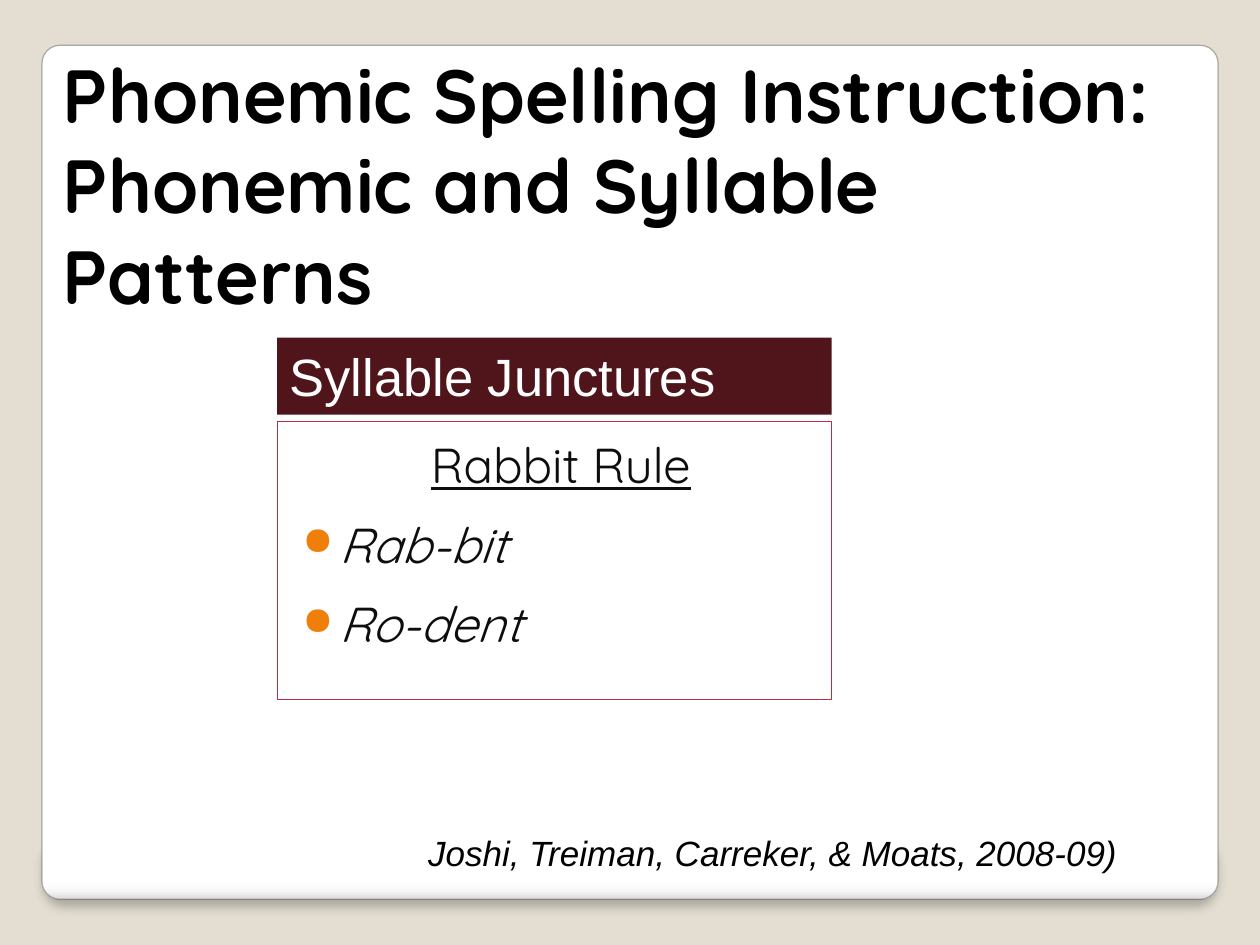
from dataclasses import dataclass

from lxml import etree
from pptx import Presentation
from pptx.dml.color import RGBColor
from pptx.enum.shapes import MSO_SHAPE
from pptx.enum.text import MSO_ANCHOR, PP_ALIGN
from pptx.oxml import parse_xml
from pptx.oxml.ns import nsdecls, qn
from pptx.util import Pt

ROUND, RECT = MSO_SHAPE.ROUNDED_RECTANGLE, MSO_SHAPE.RECTANGLE
TOP = MSO_ANCHOR.TOP
LEFT, CENTER = PP_ALIGN.LEFT, PP_ALIGN.CENTER


@dataclass(frozen=True)
class Theme:
    """Colours, fonts and type sizes of the slide."""
    back: str = "E3DED1"
    edge: str = "302F2C"
    frame: str = "BA3040"
    band: str = "50141B"
    dot: str = "F07F09"
    ink: str = "000000"
    soft: str = "0D0D0D"
    white: str = "FFFFFF"
    stops: tuple = ((0, "FFFFFF"), (98, "FFFFFF"), (99, "F7F7F7"), (100, "DADADA"))
    head: str = "Quicksand"
    plain: str = "Arial"
    title: int = 43
    label: int = 30
    body: int = 28
    cite: int = 20


THEME = Theme()


def rgb(code):
    """Turn a hex code into a colour."""
    return RGBColor.from_string(code)


def style(para, face, size, color, **flags):
    """Set the font of a whole paragraph."""
    font = para.font
    font.name, font.size = face, Pt(size)
    font.color.rgb = rgb(color)
    for name, value in flags.items():
        setattr(font, name, value)


def block(slide, kind, box):
    """Add a preset shape without shadow at a box in points."""
    shape = slide.shapes.add_shape(kind, *map(Pt, box))
    shape.shadow.inherit = False
    return shape


def card(slide, box, round_by, shade=False):
    """Draw a rounded white card with a shaded foot."""
    shape = block(slide, ROUND, box)
    shape.adjustments[0] = round_by
    shape.fill.gradient()
    shape.fill.gradient_angle = 270
    stops = "".join(
        f'<a:gs pos="{pos * 1000}"><a:srgbClr val="{code}"/></a:gs>'
        for pos, code in THEME.stops)
    props = shape._element.spPr
    old = props.find(qn("a:gradFill")).find(qn("a:gsLst"))
    old.getparent().replace(
        old, parse_xml(f'<a:gsLst {nsdecls("a")}>{stops}</a:gsLst>'))
    shape.line.color.rgb = rgb(THEME.edge)
    shape.line.width = Pt(0.67)
    tint = props.find(qn("a:ln")).find(qn("a:solidFill"))[0]
    etree.SubElement(tint, qn("a:alpha"), val="37000")
    if shade:
        props.find(qn("a:effectLst")).append(parse_xml(
            f'<a:outerShdw {nsdecls("a")} blurRad="{Pt(6)}" dist="{Pt(4)}" '
            'dir="5400000" algn="t" rotWithShape="0"><a:srgbClr val="000000">'
            '<a:alpha val="25000"/></a:srgbClr></a:outerShdw>'))


def words(slide, box, text, face, size, wrap=True, **flags):
    """Place a one-paragraph text box."""
    frame = slide.shapes.add_textbox(*map(Pt, box)).text_frame
    frame.word_wrap = wrap
    frame.text = text
    style(frame.paragraphs[0], face, size, THEME.ink, **flags)


def bullet(para):
    """Give a paragraph a round bullet and a hanging indent."""
    props = para._p.get_or_add_pPr()
    props.set("marL", str(Pt(21)))
    props.set("indent", str(-Pt(21)))
    for xml in (f'buClr {nsdecls("a")}><a:srgbClr val="{THEME.dot}"/></a:buClr>',
                f'buSzPct {nsdecls("a")} val="80000"/>',
                f'buChar {nsdecls("a")} char="●"/>'):
        props.append(parse_xml("<a:" + xml))


def rule(slide, box, label, head, items):
    """Draw a label band above a framed list of examples."""
    left, top, width, height = box
    band, gap = 44, 4
    frame = block(slide, RECT, (left, top + band + gap, width, height - band - gap))
    frame.fill.background()
    frame.line.color.rgb = rgb(THEME.frame)
    frame.line.width = Pt(0.75)
    text = frame.text_frame
    text.word_wrap, text.vertical_anchor = True, TOP
    text.margin_left, text.margin_top = Pt(14.4), Pt(7.2)
    para = text.paragraphs[0]
    para.text, para.alignment = head, CENTER
    style(para, THEME.head, THEME.body, THEME.soft, underline=True)
    for item in items:
        para = text.add_paragraph()
        para.text, para.alignment = item, LEFT
        bullet(para)
        para.space_before = Pt(12)
        style(para, THEME.head, THEME.body, THEME.soft, italic=True)

    bar = block(slide, RECT, (left, top, width, band))
    bar.fill.solid()
    bar.fill.fore_color.rgb = rgb(THEME.band)
    bar.line.fill.background()
    text = bar.text_frame
    text.word_wrap, text.vertical_anchor = True, TOP
    para = text.paragraphs[0]
    para.text, para.alignment = label, LEFT
    style(para, THEME.plain, THEME.label, THEME.white)


def main():
    """Build the slide and save it."""
    deck = Presentation()
    deck.slide_width, deck.slide_height = Pt(720), Pt(540)
    slide = deck.slides.add_slide(deck.slide_layouts[6])
    slide.background.fill.solid()
    slide.background.fill.fore_color.rgb = rgb(THEME.back)
    card(slide, (25.2, 477.4, 669.6, 36), 0.333, shade=True)
    card(slide, (24, 25.9, 672, 488), 0.021)
    words(slide, (28.8, 24, 669.6, 111.6),
          "Phonemic Spelling Instruction: Phonemic and Syllable Patterns",
          THEME.head, THEME.title, bold=True)
    rule(slide, (158.4, 193, 316.8, 206.6), "Syllable Junctures",
         "Rabbit Rule", ("Rab-bit", "Ro-dent"))
    words(slide, (237.6, 471.6, 411, 31.7),
          "Joshi, Treiman, Carreker, & Moats, 2008-09)",
          THEME.plain, THEME.cite, wrap=False, italic=True)
    deck.save("out.pptx")


if __name__ == "__main__":
    main()
